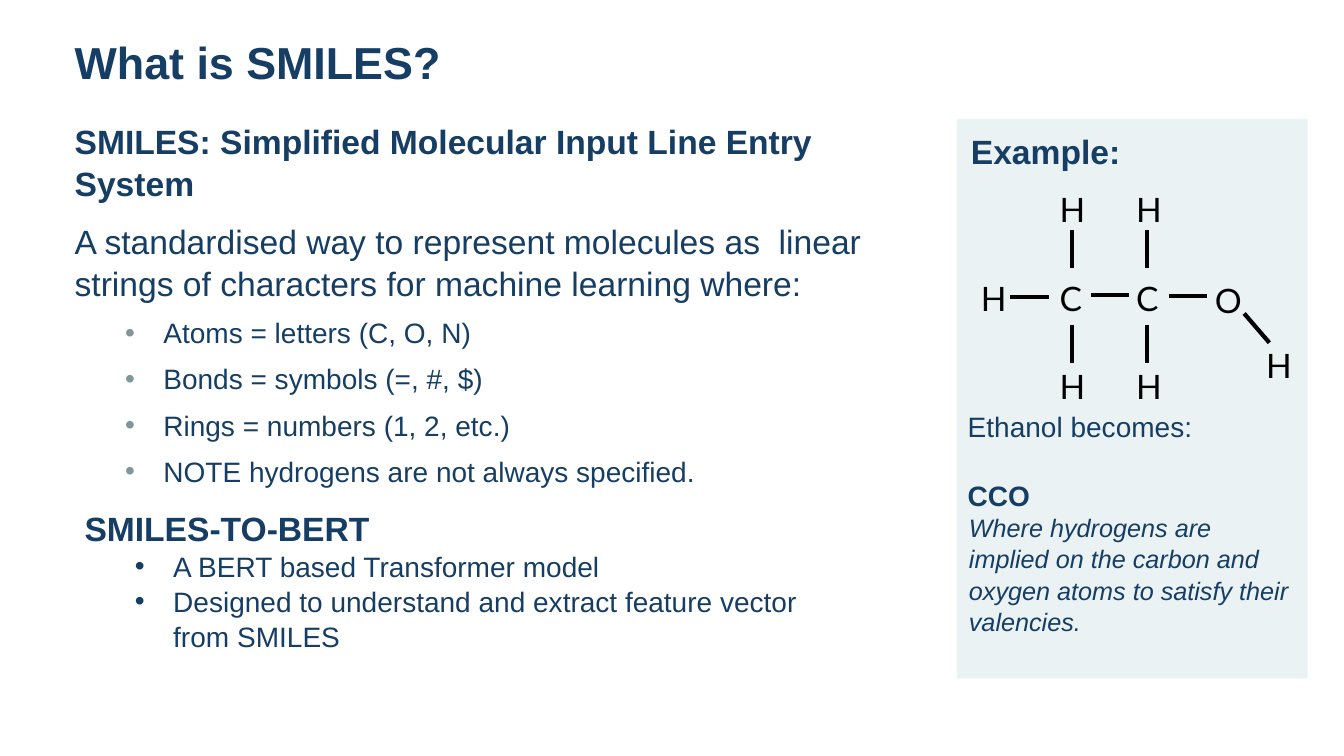
from dataclasses import dataclass
from itertools import product

from lxml.etree import SubElement
from pptx import Presentation
from pptx.dml.color import RGBColor
from pptx.enum.shapes import MSO_CONNECTOR, MSO_SHAPE
from pptx.enum.text import MSO_ANCHOR, MSO_AUTO_SIZE, PP_ALIGN
from pptx.oxml.ns import qn
from pptx.util import Inches, Pt


@dataclass(frozen=True)
class Theme:
    navy: str = "163E64"
    bullet_grey: str = "809699"
    panel: str = "EAF2F3"
    black: str = "000000"
    text_font: str = "Arial"
    atom_font: str = "Lato"
    title: int = 32
    heading: int = 24
    detail: int = 20
    remark: int = 18
    bond: int = 3
    line_spacing: float = 1.04


@dataclass
class Line:
    text: str
    size: int
    bold: bool = False
    italic: bool = False
    before: int = 0
    after: int = 0
    indent: float = 0
    bullet: str = ""


class PageBuilder:
    def __init__(self, page, theme):
        self.page = page
        self.theme = theme

    def place(self, box, left, top, width, height):
        box.left, box.top = Inches(left), Inches(top)
        box.width, box.height = Inches(width), Inches(height)

    def fill_text(self, box, lines, inset=0.1, font=None, color=None):
        frame = box.text_frame
        frame.word_wrap = True
        frame.auto_size = MSO_AUTO_SIZE.NONE
        frame.vertical_anchor = MSO_ANCHOR.TOP
        frame.margin_left = frame.margin_right = Inches(inset)
        frame.margin_top = frame.margin_bottom = Inches(0.05)
        for index, line in enumerate(lines):
            paragraph = frame.add_paragraph() if index else frame.paragraphs[0]
            paragraph.text = line.text
            paragraph.alignment = PP_ALIGN.LEFT
            paragraph.level = 1 if line.indent else 0
            paragraph.line_spacing = self.theme.line_spacing
            paragraph.space_before = Pt(line.before)
            paragraph.space_after = Pt(line.after)
            self.set_bullet(paragraph, line)
            paragraph.font.name = font or self.theme.text_font
            paragraph.font.size = Pt(line.size)
            paragraph.font.bold = line.bold
            paragraph.font.italic = line.italic
            paragraph.font.color.rgb = RGBColor.from_string(color or self.theme.navy)

    def set_bullet(self, paragraph, line):
        properties = paragraph._p.get_or_add_pPr()
        properties.set("marL", str(Inches(line.indent)))
        properties.set("indent", str(Inches(-0.38 if line.bullet else 0)))
        if line.bullet:
            color = SubElement(properties, qn("a:buClr"))
            SubElement(color, qn("a:srgbClr"), val=line.bullet)
            SubElement(properties, qn("a:buFont"), typeface=self.theme.text_font)
            SubElement(properties, qn("a:buChar"), char="•")
        else:
            SubElement(properties, qn("a:buNone"))

    def placeholder(self, box, area, lines):
        self.place(box, *area)
        self.fill_text(box, lines, inset=0)

    def text(self, area, lines, **style):
        box = self.page.shapes.add_textbox(*map(Inches, area))
        self.fill_text(box, lines, **style)

    def panel(self, area):
        box = self.page.shapes.add_shape(MSO_SHAPE.RECTANGLE, *map(Inches, area))
        box.shadow.inherit = False
        box.fill.solid()
        box.fill.fore_color.rgb = RGBColor.from_string(self.theme.panel)
        box.line.fill.background()

    def atom(self, symbol, left, top):
        self.text((left, top, 0.51, 0.5), [Line(symbol, self.theme.heading)],
                  font=self.theme.atom_font, color=self.theme.black)

    def bond(self, left, top, across, down):
        bond = self.page.shapes.add_connector(
            MSO_CONNECTOR.STRAIGHT, Inches(left), Inches(top),
            Inches(left + across), Inches(top + down))
        bond.line.width = Pt(self.theme.bond)
        bond.line.color.rgb = RGBColor.from_string(self.theme.black)
        SubElement(bond._element.spPr, qn("a:effectLst"))


def add_explanation(builder):
    theme = builder.theme
    shapes = builder.page.shapes
    builder.placeholder(shapes.title, (0.74, 0.27, 9.19, 0.85),
                        [Line("What is SMILES?", theme.title, bold=True)])
    rules = ["Atoms = letters (C, O, N)", "Bonds = symbols (=, #, $)",
             "Rings = numbers (1, 2, etc.)", "NOTE hydrogens are not always specified."]
    builder.placeholder(shapes.placeholders[1], (0.74, 1.13, 8.52, 5.84), [
        Line("SMILES: Simplified Molecular Input Line Entry System",
             theme.heading, bold=True, before=7, after=5),
        Line("A standardised way to represent molecules as  linear strings of "
             "characters for machine learning where:", theme.heading, before=7, after=5),
        *[Line(rule, theme.detail, before=3, after=5, indent=0.88,
               bullet=theme.bullet_grey) for rule in rules]])
    features = ["A BERT based Transformer model",
                "Designed to understand and extract feature vector from SMILES"]
    builder.text((0.74, 4.97, 7.84, 1.51), [
        Line("SMILES-TO-BERT", theme.heading, bold=True),
        *[Line(feature, theme.detail, indent=0.88, bullet=theme.navy)
          for feature in features]])


def add_ethanol(builder):
    carbon_columns = (10.41, 11.17)
    for left in carbon_columns:
        builder.atom("C", left, 2.69)
    for left, top in [*product(carbon_columns, (1.81, 3.57)), (9.63, 2.69), (12.46, 3.36)]:
        builder.atom("H", left, top)
    builder.atom("O", 11.95, 2.71)
    length = 0.38
    for left, top in product((10.63, 11.38), (2.28, 3.22)):
        builder.bond(left, top, 0, length)
    for left, top in ((10.02, 2.95), (10.82, 2.93), (11.59, 2.94)):
        builder.bond(left, top, length, 0)
    builder.bond(12.34, 3.11, 0.25, 0.29)


def add_example(builder):
    theme = builder.theme
    builder.panel((9.49, 1.18, 3.48, 5.55))
    builder.text((9.63, 1.23, 1.67, 0.5),
                 [Line("Example:", theme.heading, bold=True, before=7, after=5)], inset=0)
    add_ethanol(builder)
    builder.text((9, 4, 3.97, 1.11), [
        Line("Ethanol becomes:", theme.detail, indent=0.5),
        Line("CCO", theme.detail, bold=True, before=24, indent=0.5)])
    builder.text((9.11, 5.02, 3.71, 1.66), [
        Line("Where hydrogens are implied on the carbon and oxygen atoms to satisfy "
             "their valencies.", theme.remark, italic=True, before=3, after=5,
             indent=0.5)], inset=0)


def main():
    deck = Presentation()
    deck.slide_width, deck.slide_height = Inches(13.33), Inches(7.5)
    page = deck.slides.add_slide(deck.slide_layouts[1])
    builder = PageBuilder(page, Theme())
    add_explanation(builder)
    add_example(builder)
    deck.save("out.pptx")


if __name__ == "__main__":
    main()
